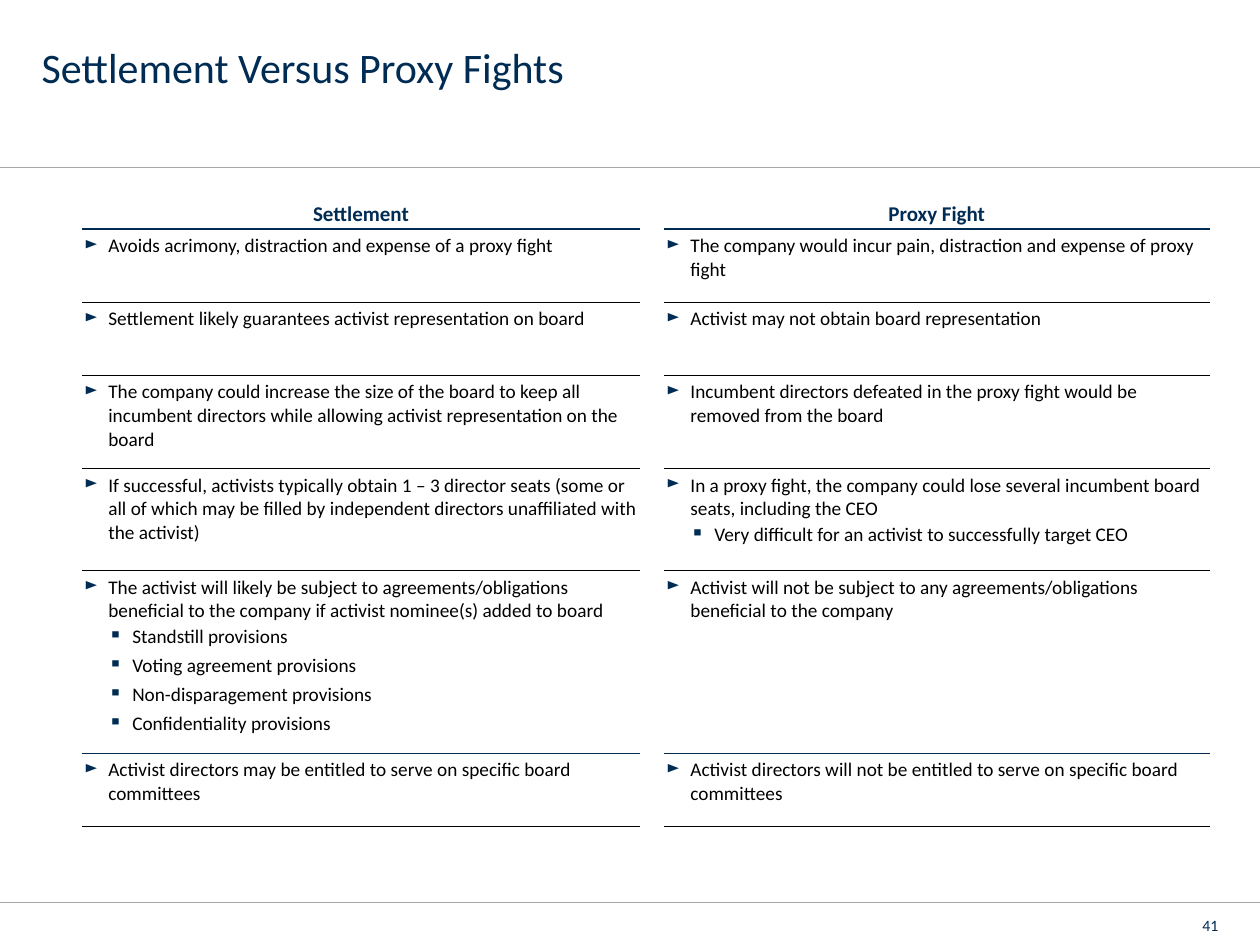
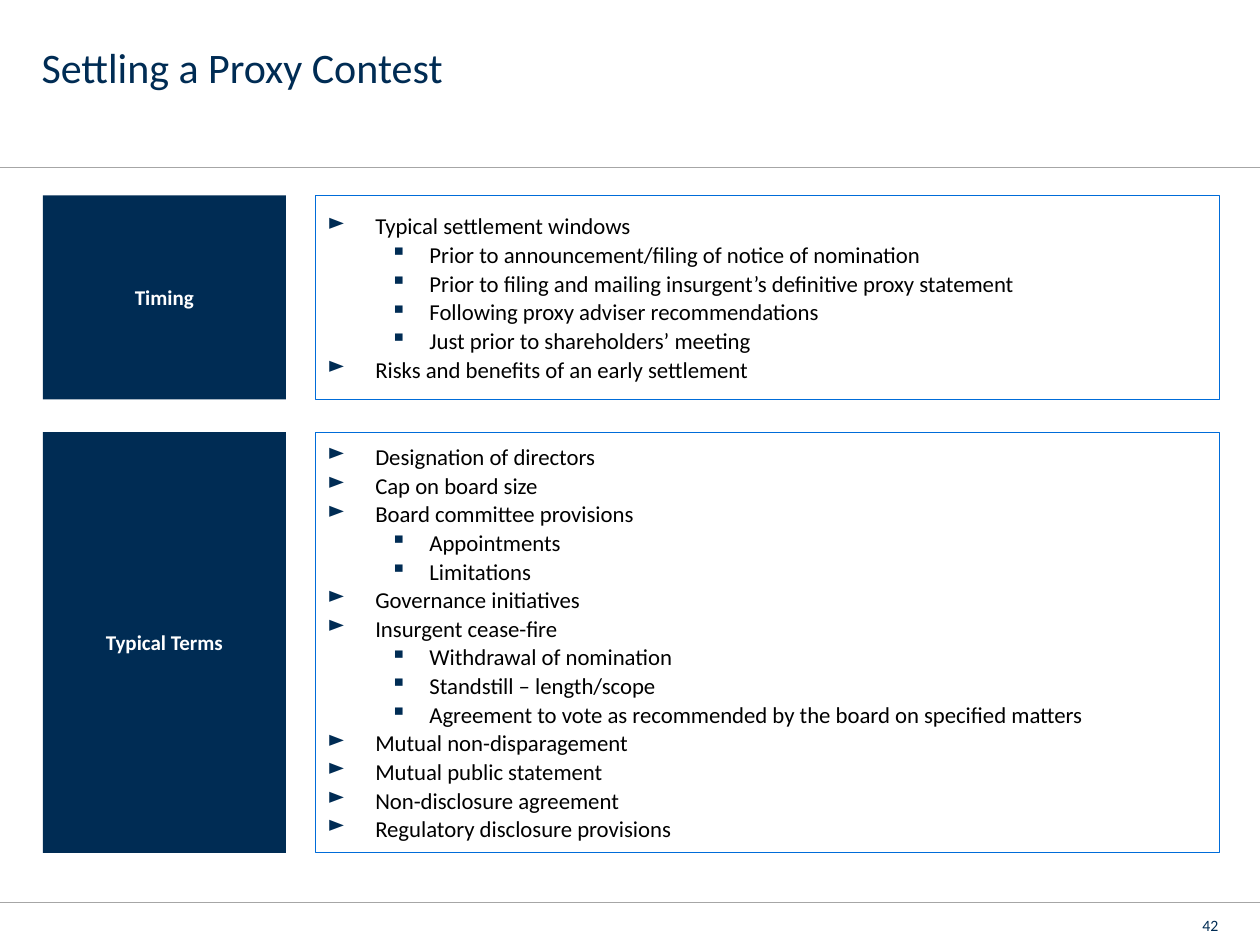
from dataclasses import dataclass

from lxml.etree import SubElement
from pptx import Presentation
from pptx.dml.color import RGBColor
from pptx.enum.shapes import MSO_CONNECTOR, MSO_SHAPE
from pptx.enum.text import MSO_ANCHOR, PP_ALIGN
from pptx.oxml.ns import qn
from pptx.util import Inches, Pt


@dataclass(frozen=True)
class Theme:
    font: str = "Calibri"
    navy: str = "002C54"
    blue: str = "006CD9"
    grey: str = "A6A6A6"
    black: str = "000000"
    white: str = "FFFFFF"
    title_size: int = 24
    heading_size: int = 12
    table_size: int = 11
    panel_size: int = 13
    number_size: int = 9
    hairline: float = 0.5


@dataclass(frozen=True)
class Bullet:
    symbol: str
    left: float
    hanging: float
    space_after: float
    percent: int = 100


THEME = Theme()
TABLE_BULLETS = (Bullet("►", 0.19, 0.19, 1, 90), Bullet("▪", 0.38, 0.19, 3))
PANEL_BULLETS = (Bullet("►", 0.38, 0.38, 0.75), Bullet("▪", 0.81, 0.31, 0.75))

# In every list a tuple holds the sub-points of the entry before it.
COMPARISON_HEADINGS = ("Settlement", "Proxy Fight")
COMPARISON_ROWS = [
    (["Avoids acrimony, distraction and expense of a proxy fight"],
     ["The company would incur pain, distraction and expense of proxy fight"]),
    (["Settlement likely guarantees activist representation on board"],
     ["Activist may not obtain board representation"]),
    (["The company could increase the size of the board to keep all incumbent "
      "directors while allowing activist representation on the board"],
     ["Incumbent directors defeated in the proxy fight would be removed from the board"]),
    (["If successful, activists typically obtain 1 – 3 director seats (some or all of "
      "which may be filled by independent directors unaffiliated with the activist)"],
     ["In a proxy fight, the company could lose several incumbent board seats, "
      "including the CEO",
      ("Very difficult for an activist to successfully target CEO",)]),
    (["The activist will likely be subject to agreements/obligations beneficial to the "
      "company if activist nominee(s) added to board",
      ("Standstill provisions", "Voting agreement provisions",
       "Non-disparagement provisions", "Confidentiality provisions")],
     ["Activist will not be subject to any agreements/obligations beneficial to the company"]),
    (["Activist directors may be entitled to serve on specific board committees"],
     ["Activist directors will not be entitled to serve on specific board committees"]),
]
COMPARISON_COLUMNS = (4.43, 0.19, 4.33)
COMPARISON_HEIGHTS = (0.33, 0.58, 0.58, 0.74, 0.81, 1.45, 0.58)
THIN_RULE = (THEME.black, THEME.hairline)
RULES_BELOW = [(THEME.navy, 1.5), *[THIN_RULE] * 4, (THEME.navy, 1), THIN_RULE]

SETTLEMENT_SECTIONS = [
    ("Timing", 1.55, 1.62, [
        "Typical settlement windows",
        ("Prior to announcement/filing of notice of nomination",
         "Prior to filing and mailing insurgent’s definitive proxy statement",
         "Following proxy adviser recommendations",
         "Just prior to shareholders’ meeting"),
        "Risks and benefits of an early settlement",
    ]),
    ("Typical Terms", 3.43, 3.34, [
        "Designation of directors",
        "Cap on board size",
        "Board committee provisions",
        ("Appointments", "Limitations"),
        "Governance initiatives",
        "Insurgent cease-fire",
        ("Withdrawal of nomination", "Standstill – length/scope",
         "Agreement to vote as recommended by the board on specified matters"),
        "Mutual non-disparagement",
        "Mutual public statement",
        "Non-disclosure agreement",
        "Regulatory disclosure provisions",
    ]),
]


def outline(entries):
    """Flatten entries into (level, text) pairs."""
    for entry in entries:
        if isinstance(entry, tuple):
            yield from ((1, text) for text in entry)
        else:
            yield 0, entry


def set_margins(target, horizontal, vertical):
    target.margin_left = target.margin_right = Inches(horizontal)
    target.margin_top = target.margin_bottom = Inches(vertical)


def set_bullet(paragraph, bullet, color):
    paragraph.space_after = Pt(bullet.space_after)
    properties = paragraph._p.get_or_add_pPr()
    properties.set("marL", str(Inches(bullet.left)))
    properties.set("indent", str(-Inches(bullet.hanging)))
    bullet_color = SubElement(properties, qn("a:buClr"))
    SubElement(bullet_color, qn("a:srgbClr"), val=color)
    SubElement(properties, qn("a:buSzPct"), val=str(bullet.percent * 1000))
    SubElement(properties, qn("a:buChar"), char=bullet.symbol)


def set_borders(cell, top=None, bottom=None):
    properties = cell._tc.get_or_add_tcPr()
    for tag, rule in (("a:lnL", None), ("a:lnR", None), ("a:lnT", top), ("a:lnB", bottom)):
        border = SubElement(properties, qn(tag))
        if rule:
            color, width = rule
            border.set("w", str(Pt(width)))
            fill = SubElement(border, qn("a:solidFill"))
            SubElement(fill, qn("a:srgbClr"), val=color)
        else:
            SubElement(border, qn("a:noFill"))


class Deck:
    def __init__(self, theme):
        self.theme = theme
        self.presentation = Presentation()
        self.presentation.slide_width = Inches(10)
        self.presentation.slide_height = Inches(7.5)
        self.slide = None

    def add_slide(self, title, number):
        self.slide = self.presentation.slides.add_slide(self.presentation.slide_layouts[6])
        for y in (7.16, 1.33):
            self.add_rule(y)
        theme = self.theme
        frame = self.add_text_box(0.33, 0.28, 9.34, 1.02)
        set_margins(frame, 0, 0.05)
        self.set_text(frame, title, theme.title_size, theme.navy)
        frame = self.add_text_box(8.96, 7.21, 0.71, 0.21)
        set_margins(frame, 0, 0)
        frame.vertical_anchor = MSO_ANCHOR.BOTTOM
        self.set_text(frame, str(number), theme.number_size, theme.navy, PP_ALIGN.RIGHT)

    def add_rule(self, y):
        line = self.slide.shapes.add_connector(
            MSO_CONNECTOR.STRAIGHT, 0, Inches(y), Inches(10), Inches(y))
        line.line.color.rgb = RGBColor.from_string(self.theme.grey)
        line.line.width = Pt(self.theme.hairline)
        SubElement(line._element.spPr, qn("a:effectLst"))

    def add_text_box(self, left, top, width, height):
        frame = self.slide.shapes.add_textbox(
            Inches(left), Inches(top), Inches(width), Inches(height)).text_frame
        frame.word_wrap = True
        return frame

    def add_rectangle(self, left, top, width, height, fill=None, line=None):
        shape = self.slide.shapes.add_shape(
            MSO_SHAPE.RECTANGLE, Inches(left), Inches(top), Inches(width), Inches(height))
        shape.shadow.inherit = False
        if fill:
            shape.fill.solid()
            shape.fill.fore_color.rgb = RGBColor.from_string(fill)
        else:
            shape.fill.background()
        if line:
            shape.line.color.rgb = RGBColor.from_string(line)
            shape.line.width = Pt(self.theme.hairline)
        else:
            shape.line.fill.background()
        frame = shape.text_frame
        frame.word_wrap = True
        frame.vertical_anchor = MSO_ANCHOR.MIDDLE
        return frame

    def format_runs(self, paragraph, size, color, bold=False):
        for run in paragraph.runs:
            run.font.name = self.theme.font
            run.font.size = Pt(size)
            run.font.bold = bold
            run.font.color.rgb = RGBColor.from_string(color)

    def set_text(self, frame, text, size, color, alignment=PP_ALIGN.LEFT, bold=False):
        frame.text = text
        paragraph = frame.paragraphs[0]
        paragraph.alignment = alignment
        self.format_runs(paragraph, size, color, bold)

    def set_bullets(self, frame, entries, bullets, size):
        for index, (level, text) in enumerate(outline(entries)):
            paragraph = frame.add_paragraph() if index else frame.paragraphs[0]
            paragraph.text = text
            paragraph.level = level
            paragraph.alignment = PP_ALIGN.LEFT
            set_bullet(paragraph, bullets[level], self.theme.navy)
            self.format_runs(paragraph, size, self.theme.black)

    def add_section(self, label, top, height, entries):
        theme = self.theme
        panel = self.add_rectangle(2.5, top, 7.18, height, line=theme.blue)
        self.set_bullets(panel, entries, PANEL_BULLETS, theme.panel_size)
        heading = self.add_rectangle(0.34, top, 1.93, height, fill=theme.navy)
        set_margins(heading, 0.09, 0.04)
        self.set_text(heading, label, theme.heading_size, theme.white, PP_ALIGN.CENTER, True)

    def add_comparison(self, left, top, headings, rows):
        """Two ruled columns with an empty gap column between them."""
        theme = self.theme
        table = self.slide.shapes.add_table(
            len(COMPARISON_HEIGHTS), len(COMPARISON_COLUMNS), Inches(left), Inches(top),
            Inches(sum(COMPARISON_COLUMNS)), Inches(sum(COMPARISON_HEIGHTS))).table
        table.first_row = table.horz_banding = False
        for column, width in zip(table.columns, COMPARISON_COLUMNS):
            column.width = Inches(width)
        for row, height in zip(table.rows, COMPARISON_HEIGHTS):
            row.height = Inches(height)

        rules_above = [None, *RULES_BELOW]
        for row_index, (first, second) in enumerate([headings, *rows]):
            is_heading = row_index == 0
            for column_index, content in enumerate((first, None, second)):
                cell = table.cell(row_index, column_index)
                set_margins(cell, 0.02, 0.02 if is_heading else 0.04)
                if content is None:
                    set_borders(cell)
                    SubElement(cell.text_frame.paragraphs[0]._p, qn("a:endParaRPr"),
                               sz=str(theme.table_size * 100))
                else:
                    set_borders(cell, rules_above[row_index], RULES_BELOW[row_index])
                if is_heading:
                    cell.fill.background()
                else:
                    cell.fill.solid()
                    cell.fill.fore_color.rgb = RGBColor.from_string(theme.white)
                if content and is_heading:
                    cell.vertical_anchor = MSO_ANCHOR.BOTTOM
                    self.set_text(cell.text_frame, content, theme.heading_size, theme.navy,
                                  PP_ALIGN.CENTER, True)
                elif content:
                    self.set_bullets(cell.text_frame, content, TABLE_BULLETS,
                                     theme.table_size)


def main():
    deck = Deck(THEME)
    deck.add_slide("Settlement Versus Proxy Fights", 41)
    deck.add_comparison(0.65, 1.49, COMPARISON_HEADINGS, COMPARISON_ROWS)
    deck.add_slide("Settling a Proxy Contest", 42)
    for section in SETTLEMENT_SECTIONS:
        deck.add_section(*section)
    deck.presentation.save("out.pptx")


if __name__ == "__main__":
    main()
